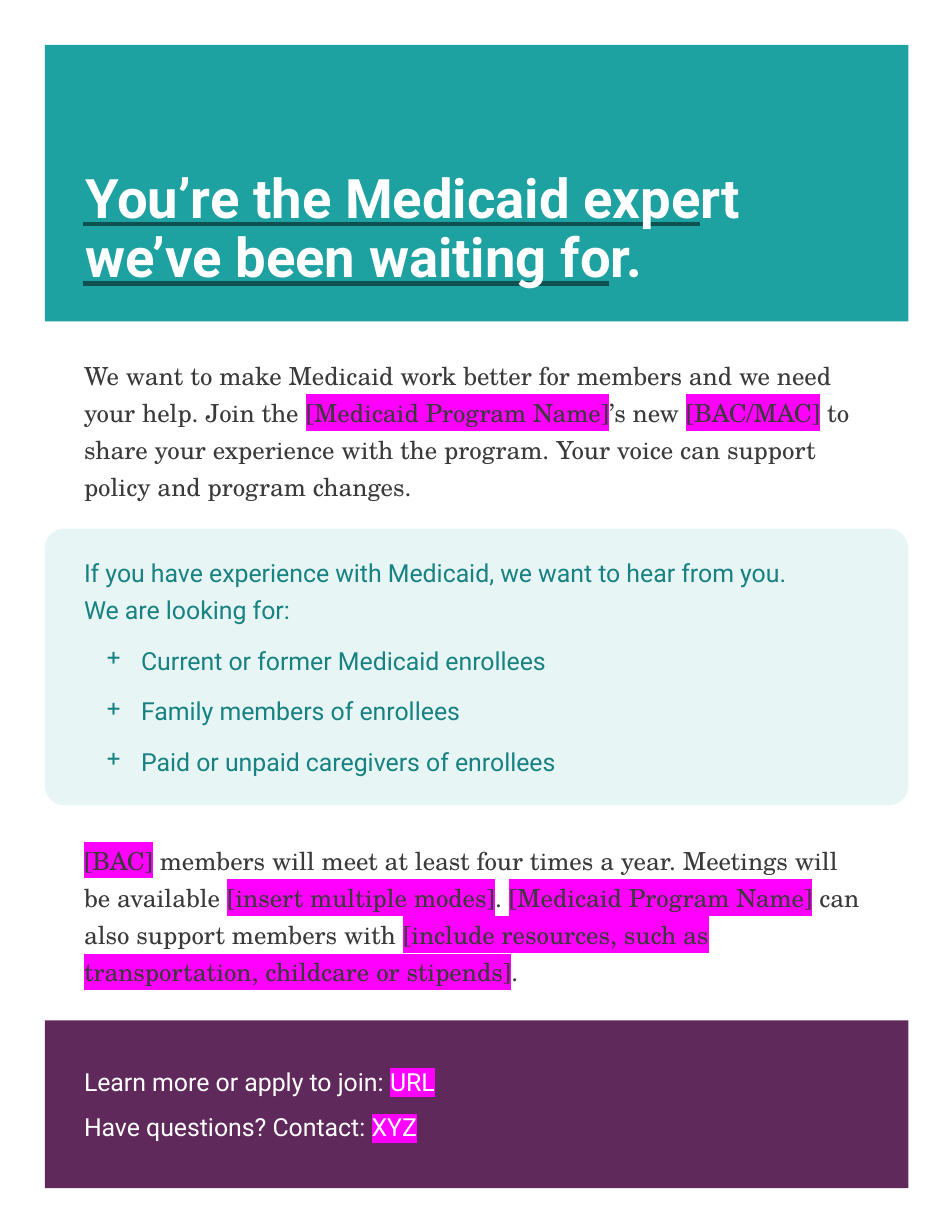
from lxml import etree
from pptx import Presentation
from pptx.dml.color import RGBColor
from pptx.enum.shapes import MSO_CONNECTOR, MSO_SHAPE
from pptx.enum.text import MSO_ANCHOR, MSO_AUTO_SIZE, PP_ALIGN
from pptx.oxml.ns import qn
from pptx.util import Inches, Pt

RECT, ROUNDED = MSO_SHAPE.RECTANGLE, MSO_SHAPE.ROUNDED_RECTANGLE
STRAIGHT = MSO_CONNECTOR.STRAIGHT
TOP, BOTTOM = MSO_ANCHOR.TOP, MSO_ANCHOR.BOTTOM
LEFT, NO_FIT = PP_ALIGN.LEFT, MSO_AUTO_SIZE.NONE

COLORS = {
    "teal": "1EA1A1",
    "pale_teal": "D2ECEC",
    "dark_teal": "0F5151",
    "teal_text": "188181",
    "purple": "60295B",
    "body": "3A3A3A",
    "white": "FFFFFF",
    "marker": "FF00FF",
}
SANS, SERIF = "Roboto", "TeX Gyre Schola"
BODY_SIZE = 16
MARGIN, PANEL_WIDTH = 0.4, 7.71
TEXT_INSET, TEXT_WIDTH = 0.35, 7.01


def rgb(name):
    return RGBColor.from_string(COLORS[name])


def add_panel(slide, box, color, kind=RECT, opacity=None):
    panel = slide.shapes.add_shape(kind, *map(Inches, box))
    panel.shadow.inherit = False
    panel.fill.solid()
    panel.fill.fore_color.rgb = rgb(color)
    panel.line.fill.background()
    if opacity is not None:
        fill_color = panel._element.spPr.find(f".//{qn('a:srgbClr')}")
        etree.SubElement(fill_color, qn("a:alpha"), val=str(opacity * 1000))
    return panel


def set_frame(frame, anchor=TOP):
    frame.word_wrap = True
    frame.auto_size = NO_FIT
    frame.vertical_anchor = anchor
    frame.margin_left = frame.margin_right = 0
    frame.margin_top = frame.margin_bottom = 0


def add_text(slide, box):
    frame = slide.shapes.add_textbox(*map(Inches, box)).text_frame
    set_frame(frame)
    return frame


def add_run(paragraph, text, font, color, size=BODY_SIZE, bold=False, marked=False):
    run = paragraph.add_run()
    run.text = text
    run.font.size = Pt(size)
    run.font.bold = bold
    run.font.color.rgb = rgb(color)
    if marked:
        highlight = etree.Element(qn("a:highlight"))
        etree.SubElement(highlight, qn("a:srgbClr"), val=COLORS["marker"])
        run._r.rPr.find(qn("a:solidFill")).addnext(highlight)
    run.font.name = font


def add_runs(paragraph, parts, font, color):
    """Add text parts; those in square brackets or in a tuple are marked."""
    for part in parts:
        marked = isinstance(part, tuple) or part.startswith("[")
        text = part[0] if isinstance(part, tuple) else part
        add_run(paragraph, text, font, color, marked=marked)


def add_plus_bullet(paragraph):
    properties = paragraph._p.get_or_add_pPr()
    properties.set("marL", str(Inches(0.51)))
    properties.set("indent", str(Inches(-0.31)))
    etree.SubElement(properties, qn("a:buChar"), char="+")


def build_banner(slide, box):
    left, top, _, _ = box
    add_panel(slide, box, "teal")

    # Underlines behind the headline
    for offset, length in ((1.6, 5.51), (2.13, 4.7)):
        start, y = Inches(left + 0.34), Inches(top + offset)
        underline = slide.shapes.add_connector(
            STRAIGHT, start, y, start + Inches(length), y)
        underline.line.color.rgb = rgb("dark_teal")
        underline.line.width = Pt(3)
        etree.SubElement(underline._element.spPr, qn("a:effectLst"))

    # Headline, brought in front of the banner
    headline = slide.shapes.title
    headline.left, headline.top = Inches(left + 0.36), Inches(top + 1.59)
    headline.width, headline.height = Inches(5.97), Inches(0.59)
    slide.shapes._spTree.append(headline._element)
    set_frame(headline.text_frame, BOTTOM)
    paragraph = headline.text_frame.paragraphs[0]
    paragraph.alignment = LEFT
    paragraph.line_spacing = 0.9
    add_run(paragraph, "You’re the Medicaid expert we’ve been waiting for.",
            SANS, "white", size=35, bold=True)


def build_body(slide, box, parts):
    paragraph = add_text(slide, box).paragraphs[0]
    paragraph.line_spacing = 1.25
    add_runs(paragraph, parts, SERIF, "body")


def build_audience(slide, box, intro, groups):
    left, top, _, _ = box
    add_panel(slide, box, "pale_teal", ROUNDED, opacity=52).adjustments[0] = 0.071
    frame = add_text(slide, (left + TEXT_INSET, top + 0.19, TEXT_WIDTH, 2.03))

    # Two-line introduction
    paragraph = frame.paragraphs[0]
    add_run(paragraph, intro[0], SANS, "teal_text")
    paragraph.add_line_break()
    add_run(paragraph, intro[1], SANS, "teal_text")

    # Groups invited
    for group in groups:
        paragraph = frame.add_paragraph()
        add_plus_bullet(paragraph)
        paragraph.font.size = Pt(BODY_SIZE)
        add_run(paragraph, group, SANS, "teal_text")
    for paragraph in frame.paragraphs:
        paragraph.line_spacing = 1.25
        paragraph.space_after = Pt(8.5)


def build_contact(slide, box, lines):
    left, top, _, _ = box
    add_panel(slide, box, "purple")
    frame = add_text(slide, (left + TEXT_INSET, top + 0.44, 4.05, 0.62))
    for index, parts in enumerate(lines):
        paragraph = frame.add_paragraph() if index else frame.paragraphs[0]
        paragraph.line_spacing = 0.9
        paragraph.space_after = Pt(12)
        add_runs(paragraph, parts, SANS, "white")


def main():
    deck = Presentation()
    deck.slide_width, deck.slide_height = Inches(8.5), Inches(11)
    slide = deck.slides.add_slide(deck.slide_layouts[5])
    text_left = MARGIN + TEXT_INSET

    build_banner(slide, (MARGIN, 0.4, PANEL_WIDTH, 2.47))
    build_body(slide, (text_left, 3.15, TEXT_WIDTH, 1.23), [
        "We want to make Medicaid work better for members and we need your help. "
        "Join the ",
        "[Medicaid Program Name]", "’s new ", "[BAC/MAC]",
        " to share your experience with the program. Your voice can support "
        "policy and program changes.",
    ])
    build_audience(
        slide, (MARGIN, 4.72, PANEL_WIDTH, 2.47),
        ("If you have experience with Medicaid, we want to hear from you.",
         "We are looking for:"),
        ("Current or former Medicaid enrollees",
         "Family members of enrollees",
         "Paid or unpaid caregivers of enrollees"))
    build_body(slide, (text_left, 7.48, TEXT_WIDTH, 1.31), [
        "[BAC]",
        " members will meet at least four times a year. Meetings will be available ",
        "[insert multiple modes]", ". ", "[Medicaid Program Name]",
        " can also support members with ",
        "[include resources, such as transportation, childcare or stipends]", ".",
    ])
    build_contact(slide, (MARGIN, 9.11, PANEL_WIDTH, 1.5), [
        ["Learn more or apply to join: ", ("URL",)],
        ["Have questions? Contact: ", ("XYZ",)],
    ])
    deck.save("out.pptx")


if __name__ == "__main__":
    main()
